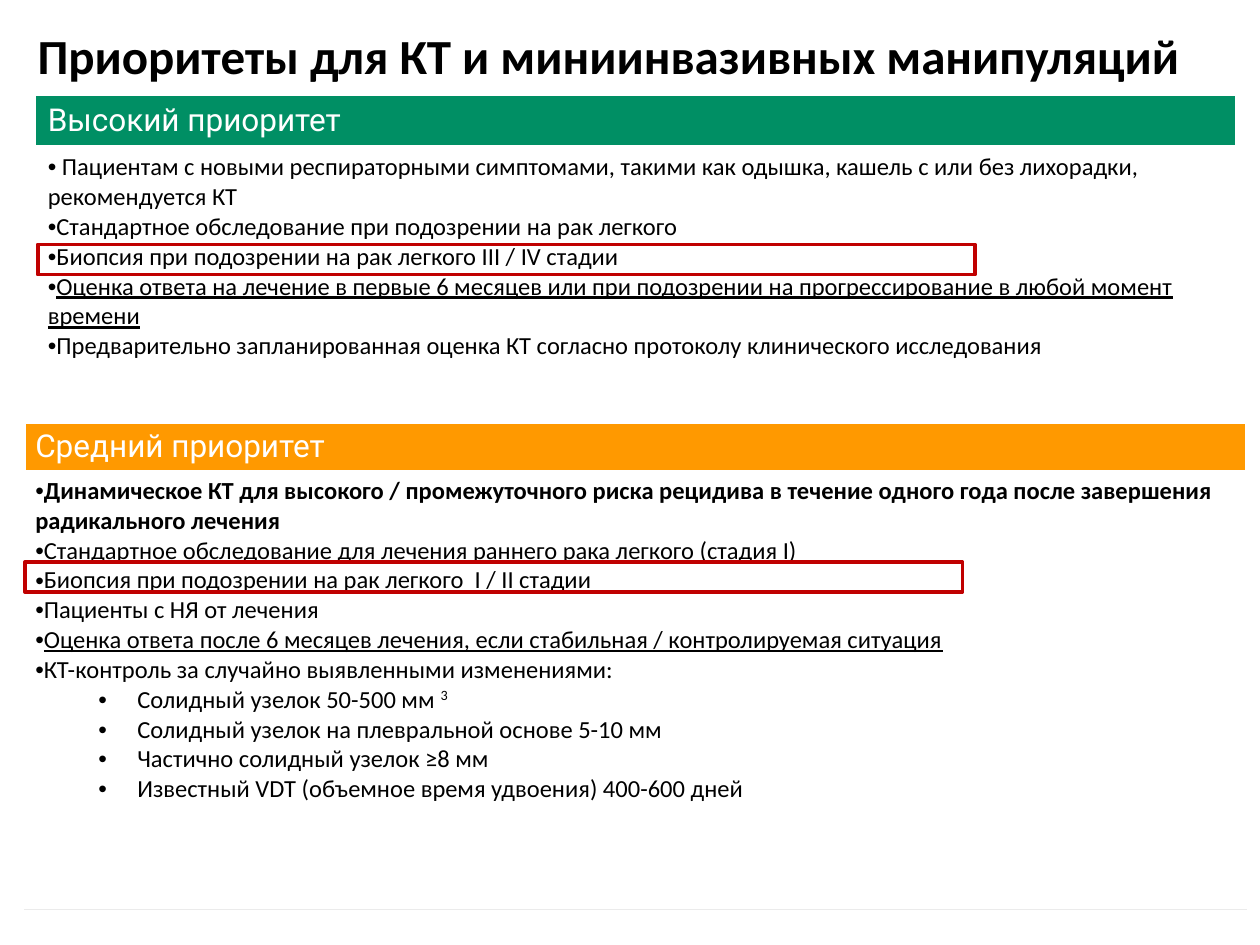
from pptx import Presentation
from pptx.dml.color import RGBColor
from pptx.enum.shapes import MSO_SHAPE as Shape
from pptx.enum.text import MSO_ANCHOR as Anchor, PP_ALIGN as Align
from pptx.oxml import parse_xml
from pptx.oxml.ns import nsdecls
from pptx.util import Inches, Pt

TITLE = "Приоритеты для КТ и миниинвазивных манипуляций"

# Items: text (^ starts a superscript), style: b bold, u underlined, s sub-item
HIGH = [
    (" Пациентам с новыми респираторными симптомами, такими как одышка, "
     "кашель с или без лихорадки, рекомендуется КТ", ""),
    ("Стандартное обследование при подозрении на рак легкого", ""),
    ("Биопсия при подозрении на рак легкого III / IV стадии", ""),
    ("Оценка ответа на лечение в первые 6 месяцев или при подозрении "
     "на прогрессирование в любой момент времени", "u"),
    ("Предварительно запланированная оценка КТ согласно протоколу "
     "клинического исследования", ""),
]
MEDIUM = [
    ("Динамическое КТ для высокого / промежуточного риска рецидива "
     "в течение одного года после завершения радикального лечения", "b"),
    ("Стандартное обследование для лечения раннего рака легкого (стадия I)", ""),
    ("Биопсия при подозрении на рак легкого  I / II стадии", ""),
    ("Пациенты с НЯ от лечения", ""),
    ("Оценка ответа после 6 месяцев лечения, если стабильная / "
     "контролируемая ситуация", "u"),
    ("КТ-контроль за случайно выявленными изменениями:", ""),
    ("Солидный узелок 50-500 мм ^3", "s"),
    ("Солидный узелок на плевральной основе 5-10 мм", "s"),
    ("Частично солидный узелок ≥8 мм", "s"),
    ("Известный VDT (объемное время удвоения) 400-600 дней", "s"),
]

# Heading, fill, left, top, width, row heights, side inset, items
TABLES = [
    ("Высокий приоритет", "008F64", 0.28, 0.76, 9.53, (0.39, 2.24), 0.1, HIGH),
    ("Средний приоритет", "FF9900", 0.2, 3.36, 9.69, (0.37, 3.48), 0.08, MEDIUM),
]
FRAMES = [(0.3, 1.94), (0.2, 4.46)]
FRAME_SIZE = (7.44, 0.24)


def color(code):
    return RGBColor.from_string(code)


def style(run, size, face, code, bold=False, line=False):
    font = run.font
    font.size, font.name = Pt(size), face
    font.bold, font.underline = bold, line
    font.color.rgb = color(code)


def set_cell(cell, fill, inset):
    cell.margin_left = cell.margin_right = Inches(inset)
    cell.margin_top = cell.margin_bottom = Inches(inset / 2)
    cell.fill.solid()
    cell.fill.fore_color.rgb = color(fill)
    edge = parse_xml(
        f'<a:lnB {nsdecls("a")} w="9525"><a:solidFill>'
        '<a:srgbClr val="EBEBEB"/></a:solidFill></a:lnB>')
    cell._tc.get_or_add_tcPr().insert(0, edge)


def add_item(para, text, kind):
    props = para._p.get_or_add_pPr()
    if kind == "s":
        props.set("lvl", "1")
        props.set("marL", str(Inches(0.81)))
        props.set("indent", str(Inches(-0.31)))
    props.append(parse_xml(f'<a:buFont {nsdecls("a")} typeface="Arial"/>'))
    props.append(parse_xml(f'<a:buChar {nsdecls("a")} char="•"/>'))
    for i, part in enumerate(text.split("^")):
        run = para.add_run()
        run.text = part
        style(run, 14, "Calibri", "000000", kind == "b", kind == "u")
        if i:
            run.font._element.set("baseline", "30000")


def add_table(slide, head, fill, left, top, width, rows, inset, items):
    table = slide.shapes.add_table(
        2, 1, Inches(left), Inches(top), Inches(width), Inches(sum(rows))).table
    table.first_row = table.horz_banding = False
    for row, height in zip(table.rows, rows):
        row.height = Inches(height)
    top_cell, body = table.cell(0, 0), table.cell(1, 0)
    set_cell(top_cell, fill, inset)
    set_cell(body, "FFFFFF", inset)
    top_cell.text_frame.text = head
    style(top_cell.text_frame.paragraphs[0].runs[0], 18, "Roboto", "FFFFFF")
    frame = body.text_frame
    for i, (text, kind) in enumerate(items):
        add_item(frame.add_paragraph() if i else frame.paragraphs[0], text, kind)


def main():
    deck = Presentation()
    deck.slide_width, deck.slide_height = Inches(10), Inches(7.5)
    slide = deck.slides.add_slide(deck.slide_layouts[6])

    # Title
    box = slide.shapes.add_textbox(
        Inches(0.2), Inches(0.2), Inches(9.76), Inches(0.47)).text_frame
    box.word_wrap = True
    box.margin_top = box.margin_bottom = 0
    box.vertical_anchor = Anchor.MIDDLE
    box.text = TITLE
    box.paragraphs[0].alignment = Align.LEFT
    style(box.paragraphs[0].runs[0], 28, "Calibri", "000000", True)

    # Priority tables
    for spec in TABLES:
        add_table(slide, *spec)

    # Red frames around the biopsy lines
    for spot in FRAMES:
        rect = slide.shapes.add_shape(
            Shape.RECTANGLE, *map(Inches, spot + FRAME_SIZE))
        rect.shadow.inherit = False
        rect.fill.background()
        rect.line.color.rgb = color("C00000")
        rect.line.width = Pt(2)

    deck.save("out.pptx")


if __name__ == "__main__":
    main()
